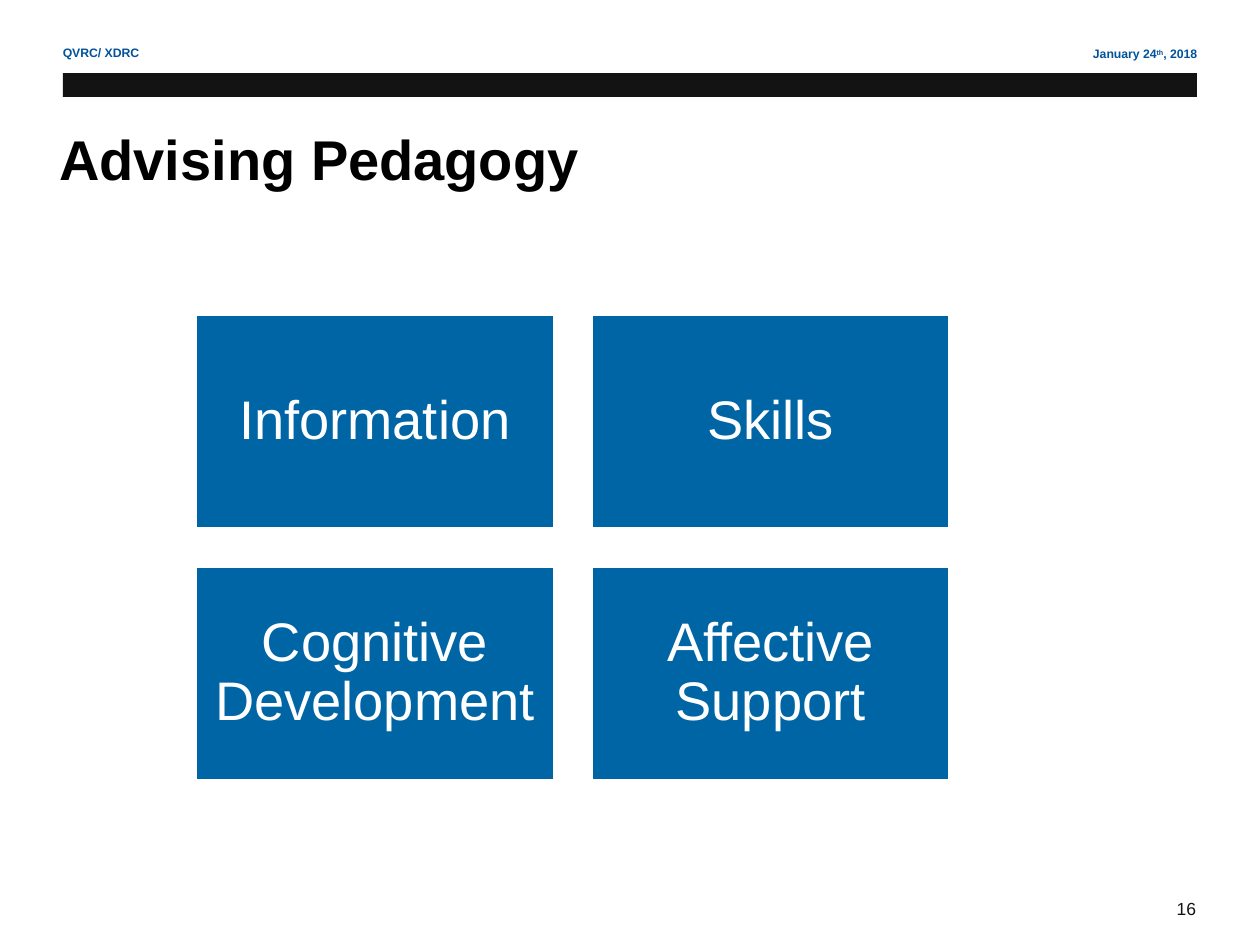
from pptx import Presentation
from pptx.dml.color import RGBColor
from pptx.enum.shapes import MSO_SHAPE
from pptx.enum.text import MSO_ANCHOR, MSO_AUTO_SIZE, PP_ALIGN
from pptx.util import Inches, Pt

RECT = MSO_SHAPE.RECTANGLE
TOP, MIDDLE = MSO_ANCHOR.TOP, MSO_ANCHOR.MIDDLE
LEFT, CENTER, RIGHT = PP_ALIGN.LEFT, PP_ALIGN.CENTER, PP_ALIGN.RIGHT
NO_FIT = MSO_AUTO_SIZE.NONE
BLACK = RGBColor(0x00, 0x00, 0x00)
INK = RGBColor(0x14, 0x13, 0x13)
NAVY = RGBColor(0x00, 0x53, 0x9B)
BLUE = RGBColor(0x00, 0x65, 0xA4)
WHITE = RGBColor(0xFF, 0xFF, 0xFF)


def format_text(p, size, color, align, bold=False):
    p.alignment = align
    p.font.name = "Arial"
    p.font.size = Pt(size)
    p.font.bold = bold
    p.font.color.rgb = color


def add_text(s, runs, left, top, width, height):
    tf = s.shapes.add_textbox(Inches(left), Inches(top), Inches(width), Inches(height)).text_frame
    tf.word_wrap = True
    p = tf.paragraphs[0]
    for text in runs:
        p.add_run().text = text
    return p


prs = Presentation()
prs.slide_width, prs.slide_height = Inches(10), Inches(7.5)
s = prs.slides.add_slide(prs.slide_layouts[5])

p = add_text(s, ["January 24", "th", ", 2018"], 6.42, 0.32, 3.18, 0.22)
format_text(p, 7, NAVY, RIGHT, bold=True)
p.space_before = Pt(2.3)
p.runs[1].font._element.set("baseline", "30000")

p = add_text(s, ["16"], 9.24, 7.08, 0.46, 0.27)
format_text(p, 10, INK, LEFT)

bar = s.shapes.add_shape(RECT, Inches(0.5), Inches(0.58), Inches(9), Inches(0.19))
bar.shadow.inherit = False
bar.fill.solid()
bar.fill.fore_color.rgb = INK
bar.line.fill.background()

p = add_text(s, ["QVRC/ XDRC"], 0.4, 0.31, 3.56, 0.22)
format_text(p, 7, NAVY, LEFT, bold=True)
p.space_before = Pt(2.3)

title = s.shapes.title
title.left, title.top, title.width, title.height = Inches(0.37), Inches(0.87), Inches(9), Inches(1.25)
tf = title.text_frame
tf.text = "Advising Pedagogy"
tf.auto_size = NO_FIT
tf.vertical_anchor = TOP
tf.margin_top = Inches(0.12)
format_text(tf.paragraphs[0], 32, BLACK, LEFT, bold=True)

topics = ["Information", "Skills", "Cognitive Development", "Affective Support"]
for i, topic in enumerate(topics):
    row, col = divmod(i, 2)
    box = s.shapes.add_shape(RECT, Inches(1.55 + 3.14 * col), Inches(2.49 + 2 * row),
                             Inches(2.85), Inches(1.71))
    box.shadow.inherit = False
    box.fill.solid()
    box.fill.fore_color.rgb = BLUE
    box.line.color.rgb = WHITE
    box.line.width = Pt(2)
    tf = box.text_frame
    tf.text = topic
    tf.word_wrap = True
    tf.vertical_anchor = MIDDLE
    tf.margin_left = tf.margin_right = tf.margin_top = tf.margin_bottom = Inches(0.13)
    p = tf.paragraphs[0]
    format_text(p, 31, WHITE, CENTER)
    p.line_spacing = 0.9

prs.save("out.pptx")
